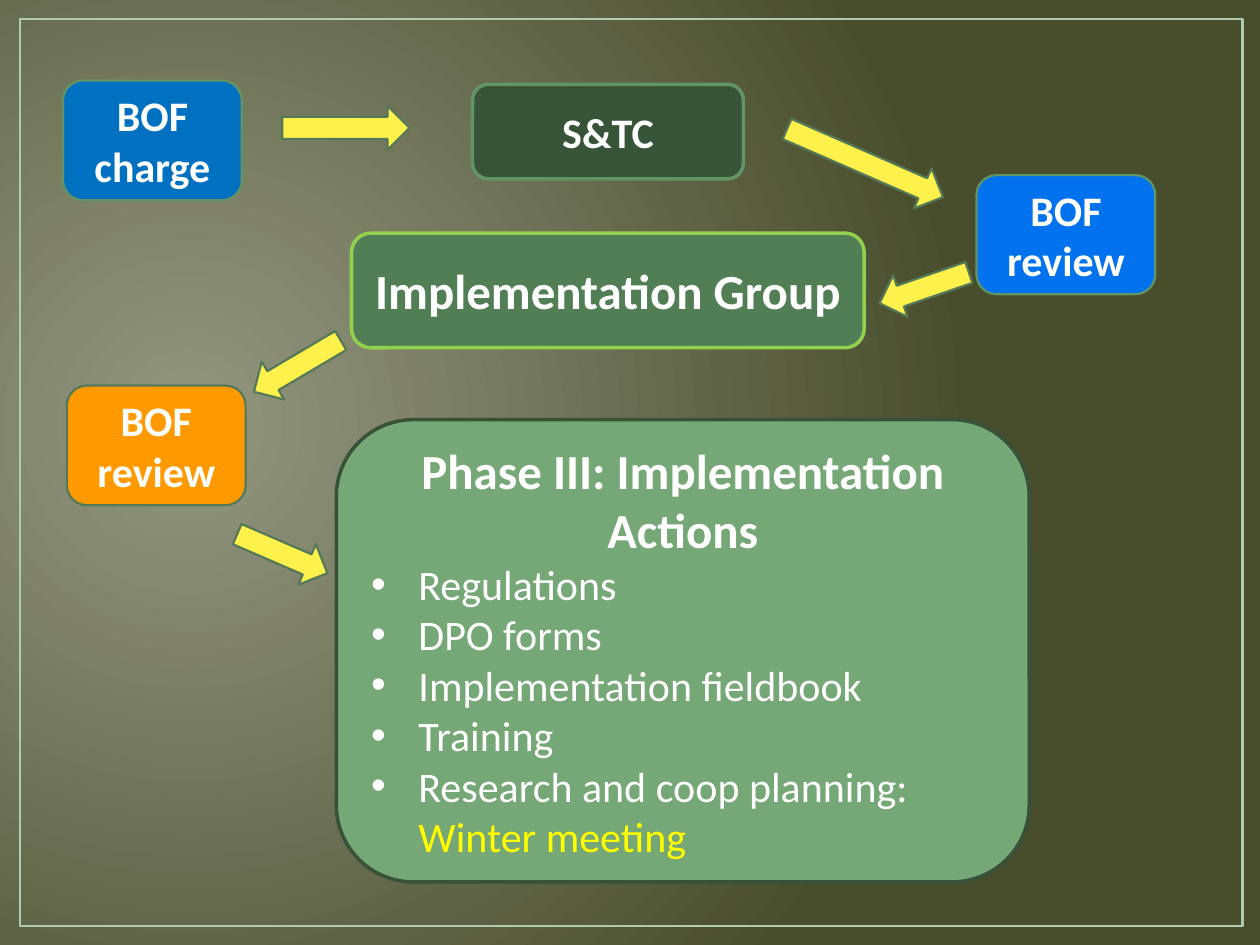
from lxml import etree
from pptx import Presentation
from pptx import util as u
from pptx.dml import color
from pptx.enum import shapes, text
from pptx.oxml import ns

FONT = "Calibri"
COLORS = {
    "glow": "949780", "olive": "484D2C", "frame": "B0CCB0",
    "white": "FFFFFF", "yellow": "FFFF00",
    "charge": "0070C0", "review": "0272EE", "second_review": "FF9900",
    "committee": "375439", "group": "527E56", "phase": "76A776",
    "arrow": "FEF14C", "green_line": "619566", "dark_line": "547957",
    "lime_line": "92D050", "phase_line": "38523A",
}
STEPS = [
    ("S&TC", (270, 48.2, 154.8, 54), 24, "committee", "green_line", 2),
    ("BOF review", (558, 100.1, 102.2, 68), 24, "review", "green_line", 1.25),
    ("Implementation Group", (200.9, 133.2, 293, 65.5), 28, "group", "lime_line", 2),
    ("BOF review", (38.2, 220.3, 102.2, 68.4), 24, "second_review", "dark_line", 1.25),
    ("BOF charge", (36, 46, 102.2, 68.4), 24, "charge", "green_line", 1.25),
]
ARROWS = [
    ((161.3, 60.5, 72.7), 0),
    ((445.7, 80.6, 97.2), 23.6),
    ((501.1, 151.9, 54), 161),
    ((141.1, 196.6, 57.6), 149.4),
    ((133.2, 303.8, 56.2), 23.4),
]
ARROW_HEIGHT = 25.2
ACTIONS = ["Regulations", "DPO forms", "Implementation fieldbook", "Training",
           "Research and coop planning: "]


def rgb(name):
    """Return the named colour."""
    return color.RGBColor.from_string(COLORS[name])


def add_box(slide, kind, box, fill, line, width):
    """Add a preset shape with a plain fill and outline."""
    shape = slide.shapes.add_shape(kind, *(u.Pt(length) for length in box))
    shape.shadow.inherit = False
    if fill:
        shape.fill.solid()
        shape.fill.fore_color.rgb = rgb(fill)
    else:
        shape.fill.background()
    shape.line.color.rgb = rgb(line)
    shape.line.width = u.Pt(width)
    return shape


def format_runs(paragraph, size, bold, name="white"):
    """Format every run of a paragraph."""
    for run in paragraph.runs:
        run.font.name = FONT
        run.font.size = u.Pt(size)
        run.font.bold = bold
        run.font.color.rgb = rgb(name)


def add_step(slide, label, box, size, fill, line, width):
    """Add a rounded step with a bold centred label."""
    shape = add_box(slide, shapes.MSO_SHAPE.ROUNDED_RECTANGLE, box, fill, line, width)
    frame = shape.text_frame
    frame.word_wrap = True
    frame.vertical_anchor = text.MSO_ANCHOR.MIDDLE
    frame.text = label
    paragraph = frame.paragraphs[0]
    paragraph.alignment = text.PP_ALIGN.CENTER
    format_runs(paragraph, size, True)
    return shape


def add_bullet(paragraph):
    """Give a paragraph a hanging round bullet."""
    paragraph.alignment = text.PP_ALIGN.LEFT
    properties = paragraph._p.get_or_add_pPr()
    indent = u.Pt(27)
    properties.set("marL", str(indent))
    properties.set("indent", str(-indent))
    etree.SubElement(properties, ns.qn("a:buFont"), {"typeface": "Arial"})
    etree.SubElement(properties, ns.qn("a:buChar"), {"char": "•"})


def add_phase(slide, box):
    """Add the phase panel with its heading and list of actions."""
    panel = add_step(slide, "Phase III: Implementation Actions", box, 28,
                     "phase", "phase_line", 2)
    for action in ACTIONS:
        paragraph = panel.text_frame.add_paragraph()
        paragraph.text = action
        add_bullet(paragraph)
        format_runs(paragraph, 24, False)
    meeting = paragraph.add_run()
    meeting.text = "Winter meeting"
    meeting.font.name = FONT
    meeting.font.size = u.Pt(24)
    meeting.font.bold = False
    meeting.font.color.rgb = rgb("yellow")


def add_arrow(slide, box, rotation):
    """Add a block arrow turned by the given degrees."""
    arrow = add_box(slide, shapes.MSO_SHAPE.RIGHT_ARROW, (*box, ARROW_HEIGHT),
                    "arrow", "dark_line", 1.25)
    arrow.rotation = rotation


def add_background(slide):
    """Fill the slide with a round glow and add the thin frame."""
    fill = slide.background.fill
    fill.gradient()
    for stop, name in zip(fill.gradient_stops, ("glow", "olive")):
        stop.color.rgb = rgb(name)
    for stop, position in zip(fill.gradient_stops, (0, 1)):
        stop.position = position
    gradient = slide.element.find(".//" + ns.qn("a:gradFill"))
    gradient.remove(gradient.find(ns.qn("a:lin")))
    circle = etree.Element(ns.qn("a:path"), {"path": "circle"})
    gradient.find(ns.qn("a:gsLst")).addnext(circle)
    etree.SubElement(circle, ns.qn("a:fillToRect"),
                     {"l": "15000", "t": "50000", "r": "85000", "b": "60000"})
    add_box(slide, shapes.MSO_SHAPE.RECTANGLE, (11.5, 10.8, 698.4, 518.4),
            None, "frame", 1.5)


def main():
    """Build the slide and save it."""
    presentation = Presentation()
    presentation.slide_width = u.Pt(720)
    presentation.slide_height = u.Pt(540)
    slide = presentation.slides.add_slide(presentation.slide_layouts[6])
    add_background(slide)
    for step in STEPS:
        add_step(slide, *step)
    add_phase(slide, (192.2, 239.8, 396, 264.2))
    for box, rotation in ARROWS:
        add_arrow(slide, box, rotation)
    presentation.save("out.pptx")


if __name__ == "__main__":
    main()
